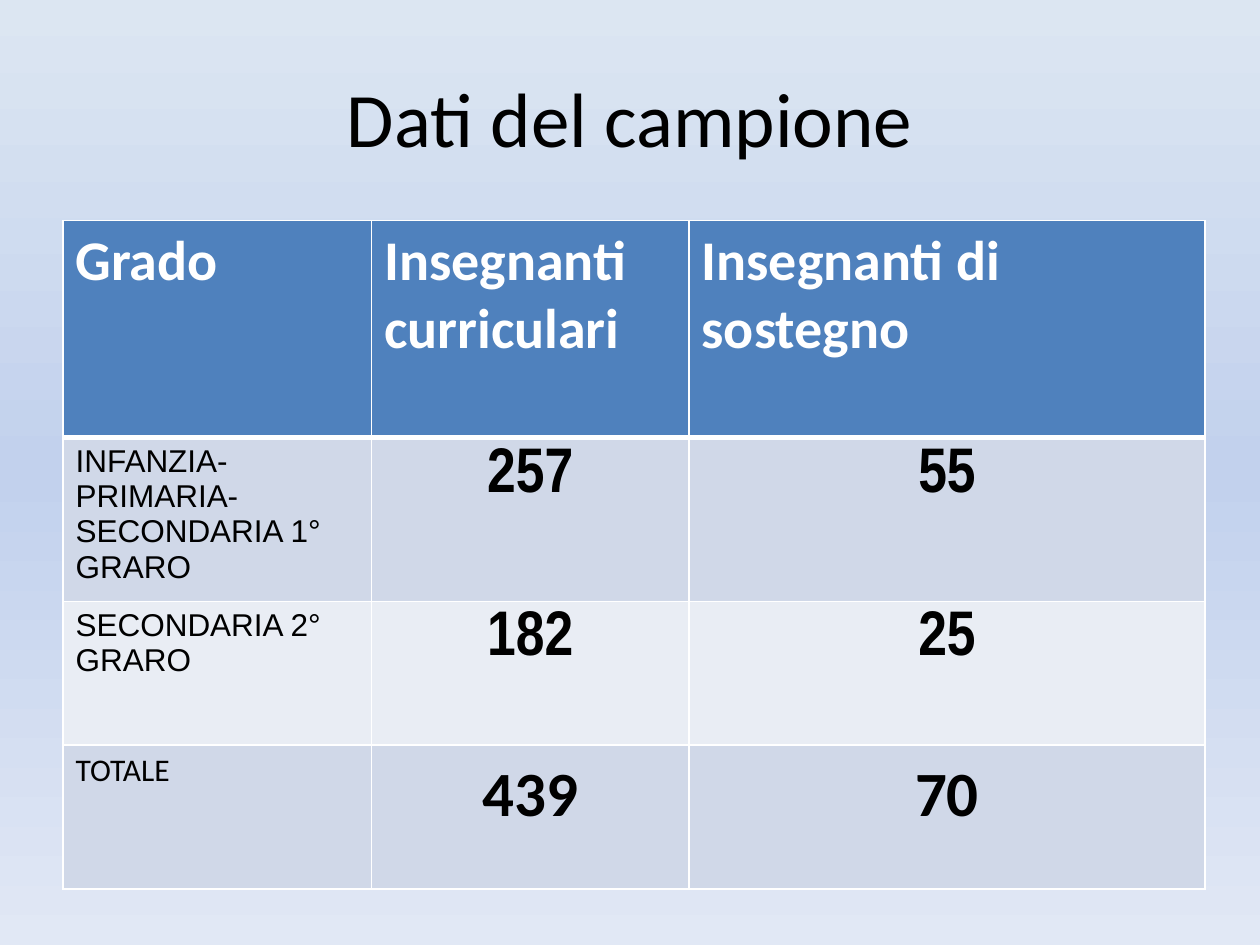
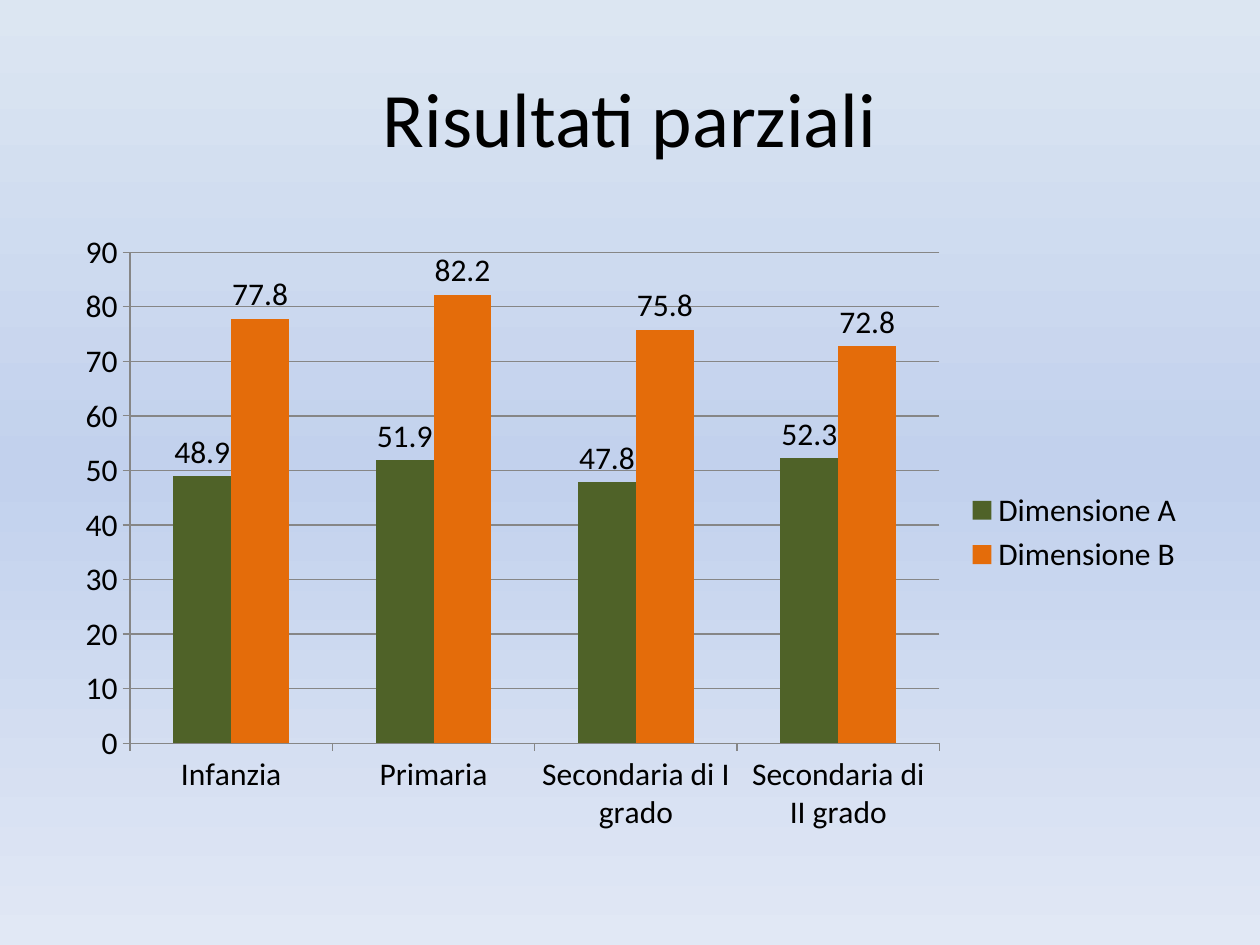
from dataclasses import dataclass

from copy import deepcopy
from lxml.etree import SubElement
from pptx import Presentation
from pptx.chart.data import CategoryChartData
from pptx.dml.color import RGBColor
from pptx.enum.chart import XL_CHART_TYPE, XL_LABEL_POSITION, XL_LEGEND_POSITION, XL_TICK_MARK
from pptx.enum.text import MSO_ANCHOR, PP_ALIGN
from pptx.oxml.ns import qn
from pptx.slide import Slide
from pptx.table import _Cell
from pptx.util import Cm, Pt

COLORS = {
    "top": "DCE6F2",
    "middle": "C2D1ED",
    "bottom": "E1E8F5",
    "text": "000000",
    "white": "FFFFFF",
    "header": "4F81BD",
    "odd": "D0D8E8",
    "even": "E9EDF4",
    "grid": "868686",
    "green": "4F6228",
    "orange": "E46C0A",
}
FONT = "Calibri"
LEFT, CONTENT_TOP, WIDTH = Cm(1.27), Cm(4.45), Cm(22.86)


@dataclass(frozen=True)
class TextStyle:
    size: int
    font: str = FONT
    color: str = "text"
    bold: bool = False


@dataclass(frozen=True)
class TableRow:
    texts: tuple[str, str, str]
    height: float
    fill: str
    label: TextStyle
    number: TextStyle


@dataclass(frozen=True)
class Series:
    name: str
    values: tuple[float, ...]
    color: str


TITLE = TextStyle(44)
HEADER = TextStyle(32, color="white", bold=True)
LABEL = TextStyle(18, "Arial")
NUMBER = TextStyle(36, "Arial Narrow", bold=True)

ROWS = (
    TableRow(("Grado", "Insegnanti curriculari", "Insegnanti di sostegno"),
             4.37, "header", HEADER, HEADER),
    TableRow(("INFANZIA-PRIMARIA-SECONDARIA 1° GRARO", "257", "55"),
             3.3, "odd", LABEL, NUMBER),
    TableRow(("SECONDARIA 2° GRARO", "182", "25"), 2.9, "even", LABEL, NUMBER),
    TableRow(("TOTALE", "439", "70"),
             2.9, "odd", TextStyle(18), TextStyle(36, bold=True)),
)
COLUMN_WIDTHS = (6.22, 6.4, 10.4)

CATEGORIES = ("Infanzia", "Primaria", "Secondaria di I grado", "Secondaria di II grado")
SERIES = (
    Series("Dimensione A", (48.9, 51.9, 47.8, 52.3), "green"),
    Series("Dimensione B", (77.8, 82.2, 75.8, 72.8), "orange"),
)


def rgb(name: str) -> RGBColor:
    return RGBColor.from_string(COLORS[name])


def apply_style(font, style: TextStyle) -> None:
    font.size = Pt(style.size)
    font.name = style.font
    font.bold = style.bold
    font.color.rgb = rgb(style.color)


def add_background(s: Slide) -> None:
    fill = s.background.fill
    fill.gradient()
    fill.gradient_angle = 270
    stop_list = s.element.find(".//" + qn("a:gsLst"))
    stop_list.append(deepcopy(stop_list[0]))
    names = ("top", "middle", "bottom")
    for i, (stop, name) in enumerate(zip(fill.gradient_stops, names)):
        stop.position = i / 2
        stop.color.rgb = rgb(name)


def add_titled_slide(prs, title: str) -> Slide:
    s = prs.slides.add_slide(prs.slide_layouts[6])
    add_background(s)
    tf = s.shapes.add_textbox(LEFT, Cm(0.76), WIDTH, Cm(3.18)).text_frame
    tf.word_wrap = True
    tf.vertical_anchor = MSO_ANCHOR.MIDDLE
    tf.text = title
    p = tf.paragraphs[0]
    p.alignment = PP_ALIGN.CENTER
    apply_style(p.runs[0].font, TITLE)
    return s


def set_borders(cell: _Cell, widths: dict[str, int]) -> None:
    properties = cell._tc.get_or_add_tcPr()
    for i, (side, width) in enumerate(widths.items()):
        line = SubElement(properties, qn(f"a:ln{side}"), w=str(Pt(width)))
        fill = SubElement(line, qn("a:solidFill"))
        SubElement(fill, qn("a:srgbClr"), val=COLORS["white"])
        properties.insert(i, line)


def fill_cell(cell: _Cell, text: str, style: TextStyle, fill: str) -> None:
    cell.text = text
    cell.fill.solid()
    cell.fill.fore_color.rgb = rgb(fill)
    apply_style(cell.text_frame.paragraphs[0].runs[0].font, style)


def center_number(cell: _Cell) -> None:
    cell.margin_left = cell.margin_right = Cm(0.18)
    cell.margin_top = cell.margin_bottom = 0
    p = cell.text_frame.paragraphs[0]
    p.alignment = PP_ALIGN.CENTER
    p.line_spacing = 1.15


def add_sample_table(s: Slide) -> None:
    width, height = Cm(sum(COLUMN_WIDTHS)), Cm(sum(row.height for row in ROWS))
    table = s.shapes.add_table(
        len(ROWS), len(COLUMN_WIDTHS), LEFT, CONTENT_TOP, width, height).table
    for column, column_width in zip(table.columns, COLUMN_WIDTHS):
        column.width = Cm(column_width)
    for r, row in enumerate(ROWS):
        table.rows[r].height = Cm(row.height)
        borders = {"L": 1, "R": 1, "T": 3 if r == 1 else 1, "B": 3 if r == 0 else 1}
        for c, text in enumerate(row.texts):
            cell = table.cell(r, c)
            fill_cell(cell, text, row.number if c else row.label, row.fill)
            set_borders(cell, borders)
            if r and c:
                center_number(cell)


def style_line(line) -> None:
    line.color.rgb = rgb("grid")
    line.width = Pt(0.75)


def add_results_chart(s: Slide) -> None:
    data = CategoryChartData(number_format="General")
    data.categories = CATEGORIES
    for series in SERIES:
        data.add_series(series.name, series.values)
    chart = s.shapes.add_chart(
        XL_CHART_TYPE.COLUMN_CLUSTERED, LEFT, CONTENT_TOP, WIDTH, Cm(12.57), data).chart
    apply_style(chart.font, TextStyle(18))
    chart.has_title = False
    chart.has_legend = True
    chart.legend.position = XL_LEGEND_POSITION.RIGHT
    chart.legend.include_in_layout = False
    for axis in (chart.category_axis, chart.value_axis):
        axis.major_tick_mark = XL_TICK_MARK.OUTSIDE
        axis.minor_tick_mark = XL_TICK_MARK.NONE
        style_line(axis.format.line)
    chart.value_axis.has_major_gridlines = True
    style_line(chart.value_axis.major_gridlines.format.line)
    plot = chart.plots[0]
    plot.gap_width = 150
    plot.overlap = 0
    plot.vary_by_categories = False
    for bars, series in zip(plot.series, SERIES):
        bars.format.fill.solid()
        bars.format.fill.fore_color.rgb = rgb(series.color)
        bars.data_labels.show_value = True
        bars.data_labels.position = XL_LABEL_POSITION.OUTSIDE_END


def main() -> None:
    prs = Presentation()
    prs.slide_width, prs.slide_height = Cm(25.4), Cm(19.05)
    add_sample_table(add_titled_slide(prs, "Dati del campione"))
    add_results_chart(add_titled_slide(prs, "Risultati parziali"))
    prs.save("out.pptx")


if __name__ == "__main__":
    main()
